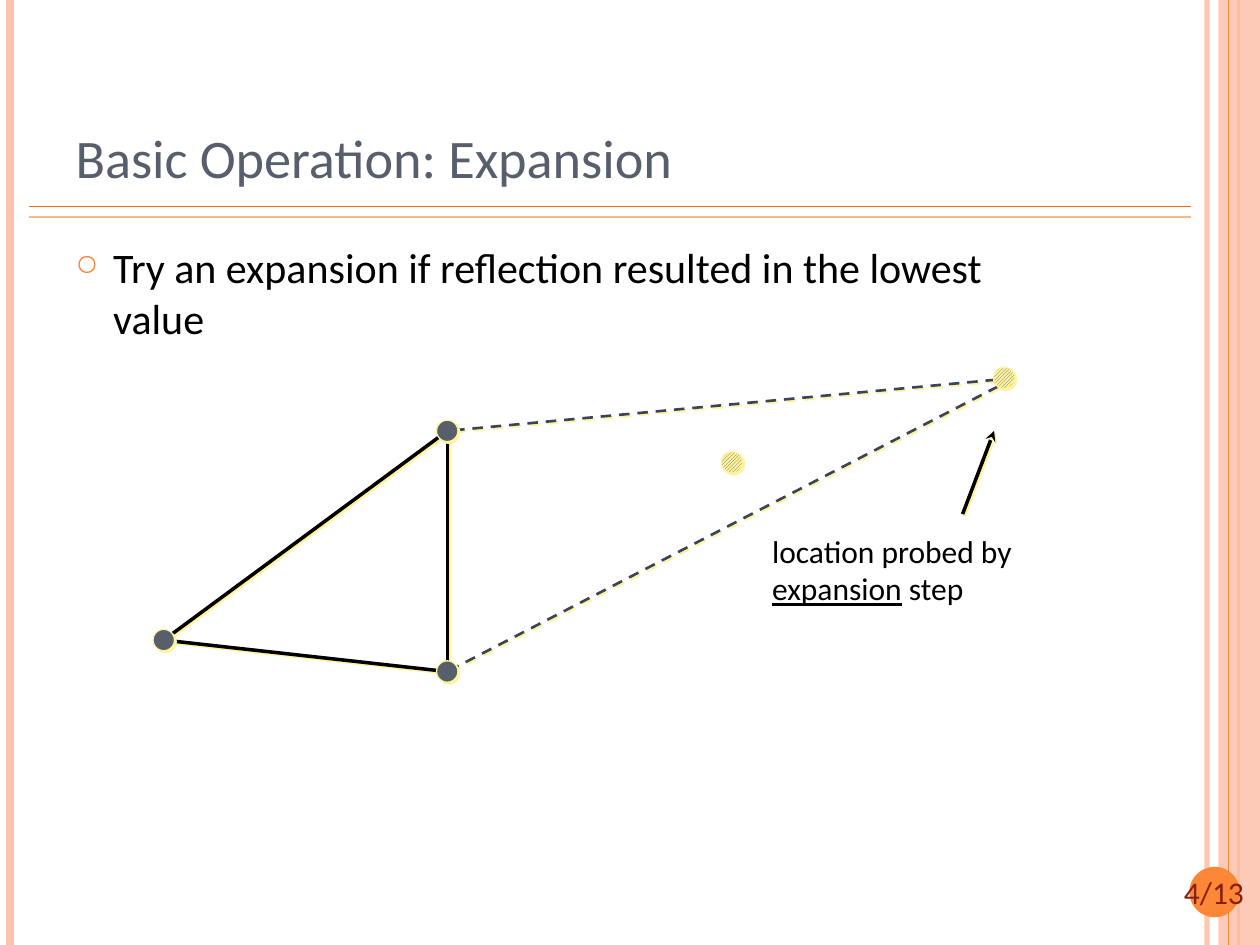
from lxml.etree import SubElement
from pptx import Presentation
from pptx.dml.color import RGBColor
from pptx.enum.dml import MSO_LINE, MSO_PATTERN
from pptx.enum.shapes import MSO_CONNECTOR, MSO_SHAPE
from pptx.enum.text import MSO_ANCHOR, MSO_AUTO_SIZE, PP_ALIGN
from pptx.oxml import parse_xml
from pptx.oxml.ns import nsdecls, qn
from pptx.util import Pt

PX = 9144  # 100 px to the inch
BLACK = RGBColor(0x00, 0x00, 0x00)
SLATE = RGBColor(0x57, 0x5F, 0x6D)
NAVY = RGBColor(0x3B, 0x43, 0x5B)
YELLOW = RGBColor(0xFF, 0xF3, 0x9D)
ORANGE = RGBColor(0xFE, 0x86, 0x37)
DEEP_ORANGE = RGBColor(0xFF, 0x6B, 0x0A)
LIGHT_ORANGE = RGBColor(0xFE, 0xB6, 0x87)
PINK = RGBColor(0xFE, 0xC3, 0xAE)
BROWN = RGBColor(0x86, 0x21, 0x10)


def set_effects(shape, shadow):
    """Give the shape a hard yellow shadow, or an empty effect list."""
    effect = (f'<a:outerShdw dist="17961" dir="2700000" algn="ctr" rotWithShape="0">'
              f'<a:srgbClr val="{YELLOW}"/></a:outerShdw>') if shadow else ""
    shape._element.spPr.append(
        parse_xml(f'<a:effectLst {nsdecls("a")}>{effect}</a:effectLst>'))


def add_line(start, end, color, width, shadow=False):
    line = shapes.add_connector(MSO_CONNECTOR.STRAIGHT,
                                *(v * PX for v in (*start, *end)))
    line.line.color.rgb = color
    line.line.width = Pt(width)
    set_effects(line, shadow)
    return line


prs = Presentation()
prs.slide_width, prs.slide_height = 1000 * PX, 750 * PX
slide = prs.slides.add_slide(prs.slide_layouts[5])
shapes = slide.shapes

# Side stripes, title rules and page badge
stripe = add_line((958, 0), (958, 750), PINK, 3)
add_line((8, 0), (8, 750), PINK, 4.5)
add_line((983, 0), (983, 750), ORANGE, 1.5)
band = shapes.add_shape(MSO_SHAPE.RECTANGLE, 967 * PX, 0, 33 * PX, 750 * PX)
badge = shapes.add_shape(MSO_SHAPE.OVAL, 944 * PX, 688 * PX, 40 * PX, 40 * PX)
for decoration, color in ((band, PINK), (badge, ORANGE)):
    decoration.fill.solid()
    decoration.fill.fore_color.rgb = color
    decoration.line.fill.background()
    decoration.shadow.inherit = False
for element, alpha in ((stripe._element, 93000), (band._element, 87000)):
    color_node = next(element.iter(qn("a:srgbClr")))
    SubElement(color_node, qn("a:alpha"), val=str(alpha))
add_line((975, 0), (975, 750), ORANGE, 0.75)
add_line((23, 164), (945, 164), DEEP_ORANGE, 1)
add_line((23, 172), (945, 172), LIGHT_ORANGE, 1)

# Texts
title = shapes.title
bullet = shapes.add_textbox(0, 0, 0, 0)
caption = shapes.add_textbox(0, 0, 0, 0)
page = shapes.add_textbox(0, 0, 0, 0)
for box, left, top, width, height in (
        (title, 50, 30, 817, 125), (bullet, 50, 187, 817, 521),
        (caption, 603, 417, 286, 90), (page, 918, 688, 91, 40)):
    box.left, box.top, box.width, box.height = (
        v * PX for v in (left, top, width, height))
    box.text_frame.word_wrap = box is not caption
    box.text_frame.auto_size = MSO_AUTO_SIZE.NONE

title.text_frame.text = "Basic Operation: Expansion"
title.text_frame.vertical_anchor = MSO_ANCHOR.BOTTOM
bullet.text_frame.text = "Try an expansion if reflection resulted in the lowest value"
page.text_frame.text = "4/13"

bullet_props = bullet.text_frame.paragraphs[0]._p.get_or_add_pPr()
bullet_props.set("marL", str(30 * PX))
bullet_props.set("indent", str(-30 * PX))
bullet_color = SubElement(bullet_props, qn("a:buClr"))
SubElement(bullet_color, qn("a:srgbClr"), val=str(ORANGE))
SubElement(bullet_props, qn("a:buSzPct"), val="70000")
SubElement(bullet_props, qn("a:buChar"), char="○")

caption_line = caption.text_frame.paragraphs[0]
caption_line.add_run().text = "location probed by"
caption_line.add_line_break()
step_name = caption_line.add_run()
step_name.text = "expansion"
step_name.font.underline = True
caption_line.add_run().text = " step"

for box, align, size, color in (
        (title, PP_ALIGN.LEFT, 31, SLATE), (bullet, PP_ALIGN.LEFT, 24, BLACK),
        (caption, PP_ALIGN.LEFT, 18, BLACK), (page, PP_ALIGN.CENTER, 18, BROWN)):
    paragraph = box.text_frame.paragraphs[0]
    paragraph.alignment = align
    for run in paragraph.runs:
        run.font.name = "Calibri"
        run.font.size = Pt(size)
        run.font.color.rgb = color

# Simplex and its expansion
worst, upper, lower = (130, 508), (355, 342), (355, 533)
reflected, expanded = (581, 367), (797, 300)

for corner in (lower, upper):
    edge = add_line((805, 300), corner, NAVY, 1.5, shadow=True)
    edge.line.dash_style = MSO_LINE.DASH
for start, end in ((worst, upper), (worst, lower), (lower, upper)):
    add_line(start, end, BLACK, 2, shadow=True)
arrow = add_line((764, 408), (789, 342), BLACK, 2, shadow=True)
SubElement(arrow.line._get_or_add_ln(), qn("a:tailEnd"), type="stealth")

DOT = 17
for x, y in (reflected, lower, worst, upper, expanded):
    dot = shapes.add_shape(MSO_SHAPE.OVAL, round((x - DOT / 2) * PX),
                           round((y - DOT / 2) * PX), DOT * PX, DOT * PX)
    if (x, y) in (reflected, expanded):
        dot.fill.patterned()
        dot.fill.pattern = MSO_PATTERN.LIGHT_UPWARD_DIAGONAL
        dot.fill.back_color.rgb = YELLOW
    else:
        dot.fill.solid()
    dot.fill.fore_color.rgb = SLATE
    dot.line.color.rgb = YELLOW
    dot.line.width = Pt(0.75)
    set_effects(dot, shadow=True)

prs.save("out.pptx")
